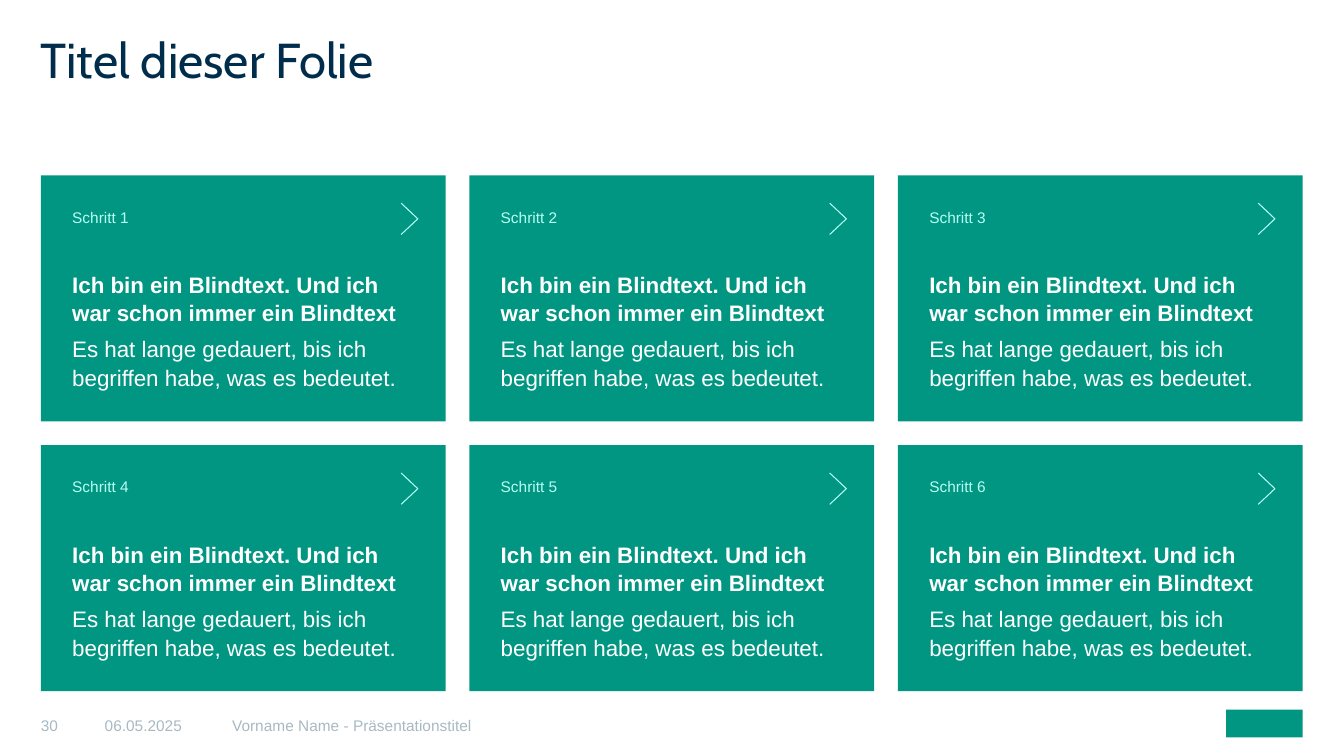
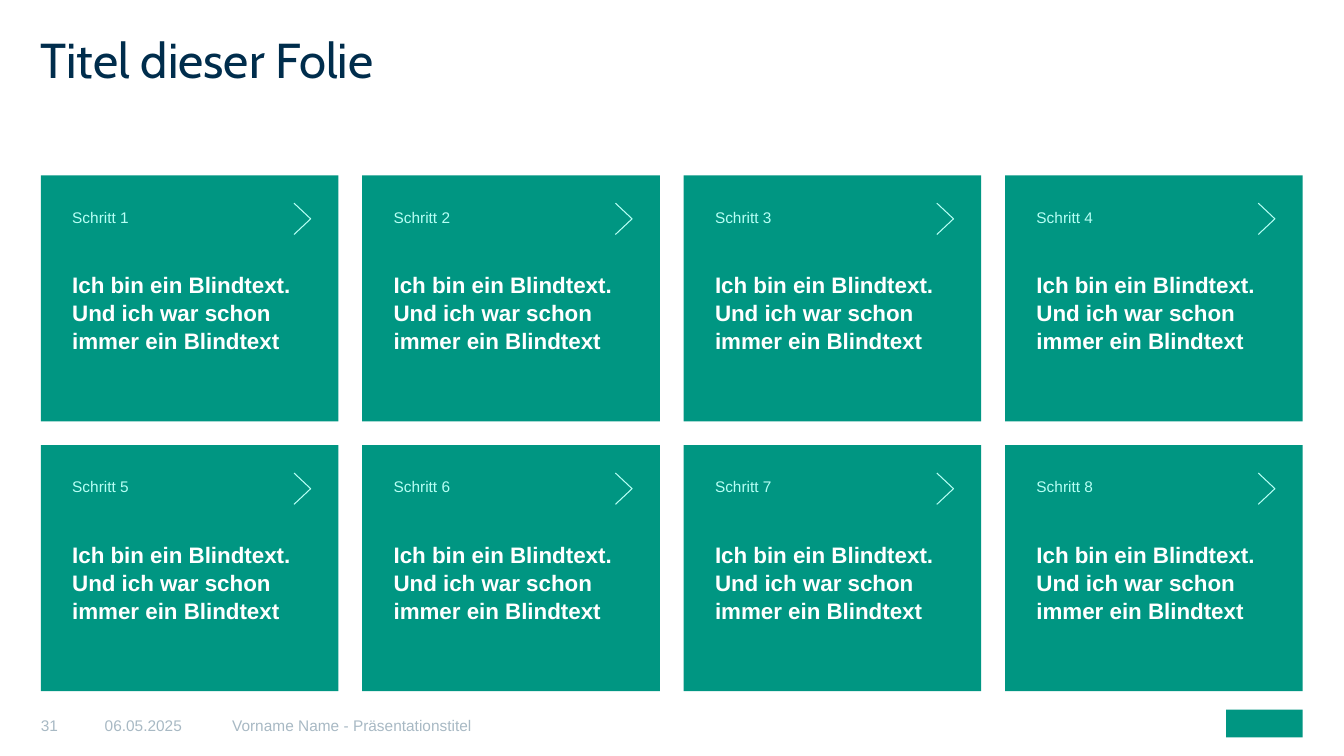
from pptx import Presentation
from pptx.dml.color import RGBColor
from pptx.enum.shapes import MSO_SHAPE
from pptx.enum.text import MSO_ANCHOR, MSO_AUTO_SIZE, PP_ALIGN
from pptx.util import Cm, Pt

GREEN = RGBColor(0x00, 0x96, 0x82)
MINT = RGBColor(0xB7, 0xFF, 0xF5)
NAVY = RGBColor(0x00, 0x2D, 0x4C)
GREY = RGBColor(0xA8, 0xB9, 0xC4)
WHITE = RGBColor(0xFF, 0xFF, 0xFF)

RECT = MSO_SHAPE.RECTANGLE
TOP, MIDDLE = MSO_ANCHOR.TOP, MSO_ANCHOR.MIDDLE
LEFT = PP_ALIGN.LEFT
FIXED = MSO_AUTO_SIZE.NONE

EDGE, WIDTH = 1.03, 31.8
GAP = 0.6
ROWS = 2
GRID_TOP, CARD_HIGH = 4.42, 6.2
FOOT_TOP, FOOT_HIGH = 17.42, 1.62

HEAD = "Ich bin ein Blindtext. Und ich war schon immer ein Blindtext"
BODY = "Es hat lange gedauert, bis ich begriffen habe, was es bedeutet."


def place(shape, left, top, width, height):
    shape.left, shape.top = Cm(left), Cm(top)
    shape.width, shape.height = Cm(width), Cm(height)


def setup(frame, anchor=TOP, inset=(0, 0, 0, 0)):
    frame.word_wrap = True
    frame.auto_size = FIXED
    frame.vertical_anchor = anchor
    frame.margin_left, frame.margin_top, frame.margin_right, frame.margin_bottom = map(Cm, inset)
    return frame


def write(frame, text, size=11, color=GREY, font="Arial", bold=False,
          before=0, after=0, lines=1.0):
    para = frame.paragraphs[0]
    if para.runs:
        para = frame.add_paragraph()
    para.alignment = LEFT
    para.space_before, para.space_after = Pt(before), Pt(after)
    para.line_spacing = lines
    run = para.add_run()
    run.text = text
    run.font.size = Pt(size)
    run.font.name = font
    run.font.bold = bold
    run.font.color.rgb = color


def block(slide, left, top, width, height):
    shape = slide.shapes.add_shape(RECT, Cm(left), Cm(top), Cm(width), Cm(height))
    shape.shadow.inherit = False
    shape.fill.solid()
    shape.fill.fore_color.rgb = GREEN
    shape.line.fill.background()
    return shape


def arrow(slide, right, top, width=0.42, height=0.79):
    left = right - width
    path = slide.shapes.build_freeform(Cm(left), Cm(top))
    path.add_line_segments(
        [(Cm(right), Cm(top + height / 2)), (Cm(left), Cm(top + height))], close=False)
    shape = path.convert_to_shape()
    shape.shadow.inherit = False
    shape.fill.background()
    shape.line.color.rgb = MINT
    shape.line.width = Pt(0.75)


def card(slide, left, top, width, height, step, body):
    shape = block(slide, left, top, width, height)
    frame = setup(shape.text_frame, inset=(0.79,) * 4)
    write(frame, f"Schritt {step}", color=MINT, after=3, lines=1.05)
    write(frame, HEAD, size=16, color=WHITE, bold=True, before=28, after=3, lines=1.05)
    if body:
        write(frame, body, size=16, color=WHITE, before=3, after=3, lines=1.05)
    arrow(slide, left + width - 0.7, top + 0.7)


def grid(slide, left, top, width, cols, body):
    wide = (width - (cols - 1) * GAP) / cols
    for index in range(cols * ROWS):
        row, col = divmod(index, cols)
        card(slide, left + col * (wide + GAP), top + row * (CARD_HIGH + GAP),
             wide, CARD_HIGH, index + 1, body)


def footer(slide, left, top, width, height, page):
    parts = (
        (str(page), 0, 1.6),
        ("06.05.2025", 1.61, 3.2),
        ("Vorname Name - Präsentationstitel", 4.82, 16.2),
    )
    for text, shift, wide in parts:
        box = slide.shapes.add_textbox(Cm(left + shift), Cm(top), Cm(wide), Cm(height))
        write(setup(box.text_frame, MIDDLE, (0, 0.1, 0, 0)), text)
    block(slide, left + width - 1.93, top + 0.46, 1.93, 0.7)


def build(deck, page, cols, body=None):
    slide = deck.slides.add_slide(deck.slide_layouts[5])
    title = slide.shapes.title
    place(title, EDGE, 1.02, WIDTH, 2.8)
    write(setup(title.text_frame), "Titel dieser Folie",
          size=35, color=NAVY, font="Cabin", lines=0.8)
    grid(slide, EDGE, GRID_TOP, WIDTH, cols, body)
    footer(slide, EDGE, FOOT_TOP, WIDTH, FOOT_HIGH, page)


def main():
    deck = Presentation()
    deck.slide_width, deck.slide_height = Cm(33.87), Cm(19.05)
    build(deck, 30, 3, BODY)
    build(deck, 31, 4)
    deck.save("out.pptx")


if __name__ == "__main__":
    main()
